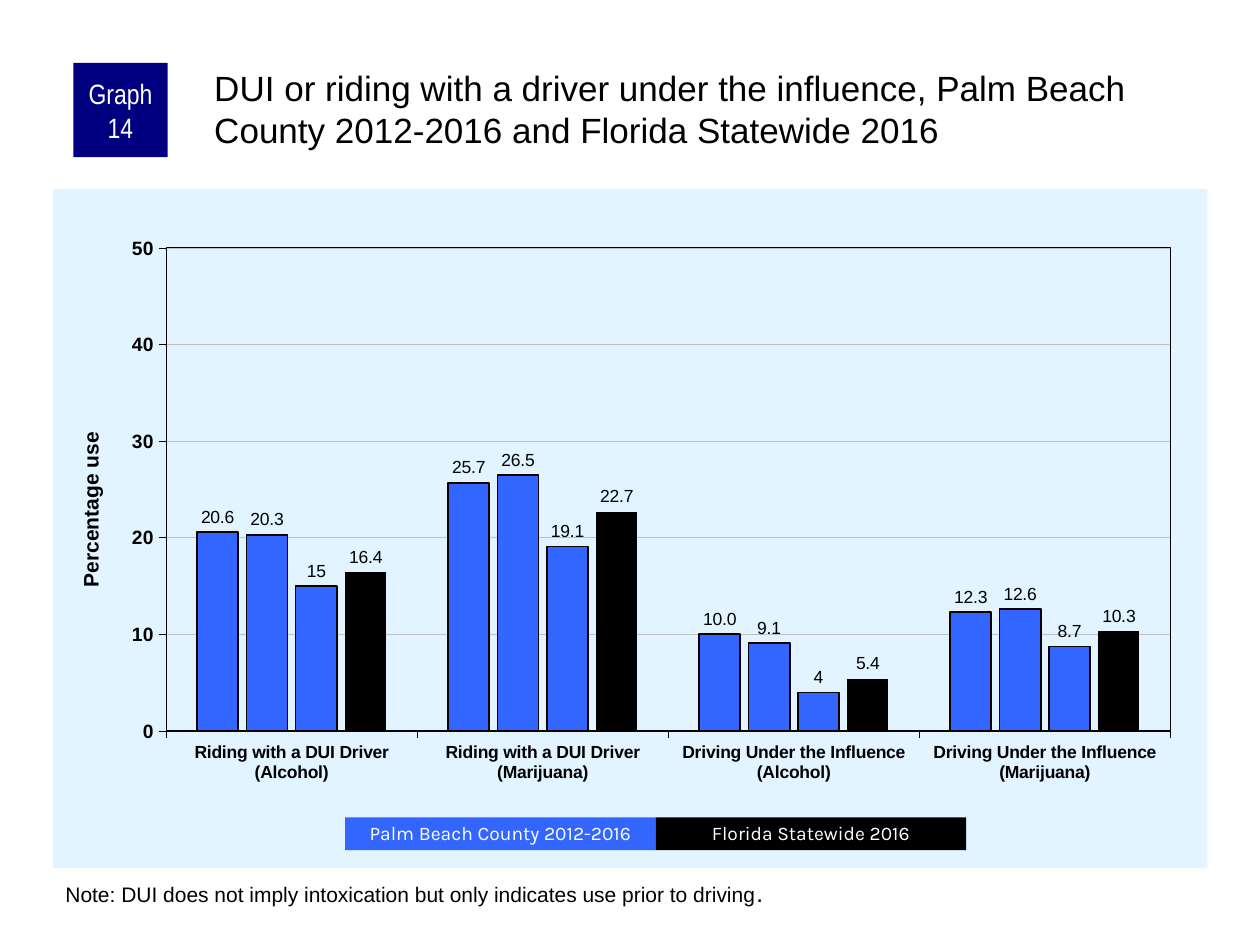
from pptx import Presentation
from pptx import util as u
from pptx.chart.data import CategoryChartData
from pptx.dml.color import RGBColor
from pptx.enum import chart as ch, shapes, text
from pptx.oxml import parse_xml

Cm, Pt = u.Cm, u.Pt
BLACK = RGBColor(0x00, 0x00, 0x00)
WHITE = RGBColor(0xFF, 0xFF, 0xFF)
NAVY = RGBColor(0x00, 0x00, 0x80)
BLUE = RGBColor(0x33, 0x66, 0xFF)
PALE = RGBColor(0xE1, 0xF4, 0xFF)
GREY = RGBColor(0xC0, 0xC0, 0xC0)
NS = ('xmlns:c="http://schemas.openxmlformats.org/drawingml/2006/chart" '
      'xmlns:a="http://schemas.openxmlformats.org/drawingml/2006/main"')


def style(font, size, name="Arial", color=BLACK, bold=False):
    font.size, font.name, font.bold = Pt(size), name, bold
    font.color.rgb = color


def block(box, fill, words, size, name):
    """Add a filled box with white centred text."""
    shape = slide.shapes.add_shape(shapes.MSO_SHAPE.RECTANGLE, *map(Cm, box))
    shape.shadow.inherit = False
    shape.fill.solid()
    shape.fill.fore_color.rgb = fill
    shape.line.fill.background()
    frame = shape.text_frame
    frame.word_wrap = True
    frame.vertical_anchor = text.MSO_ANCHOR.MIDDLE
    frame.margin_left = frame.margin_right = Cm(0.13)
    frame.margin_top = frame.margin_bottom = 0
    frame.text = words
    para = frame.paragraphs[0]
    para.alignment = text.PP_ALIGN.CENTER
    style(para.runs[0].font, size, name, WHITE)
    return para


prs = Presentation()
prs.slide_width, prs.slide_height = Cm(25.4), Cm(19.05)
slide = prs.slides.add_slide(prs.slide_layouts[6])

# Chart data
data = CategoryChartData()
data.categories = [f"{act} ({drug})"
                   for act in ("Riding with a DUI Driver", "Driving Under the Influence")
                   for drug in ("Alcohol", "Marijuana")]
rows = [  # values, colour, outline width, label format
    ((20.6, 25.7, 10, 12.3), BLUE, 1, "0.0"),
    ((20.3, 26.5, 9.1, 12.6), BLUE, 1, "0.0"),
    ((15, 19.1, 4, 8.7), BLUE, 0.75, "General"),
    ((16.4, 22.7, 5.4, 10.3), BLACK, None, "General"),
]
for num, row in enumerate(rows, 1):
    data.add_series(f"Series {num}", row[0])

# Chart
chart = slide.shapes.add_chart(
    ch.XL_CHART_TYPE.COLUMN_CLUSTERED,
    Cm(1.07), Cm(3.81), Cm(23.27), Cm(13.69), data).chart
chart.has_legend = chart.has_title = False
style(chart.font, 11.5)
plot = chart.plots[0]
plot.gap_width, plot.overlap, plot.vary_by_categories = 150, -20, False

# Columns and their labels
for bars, (vals, color, width, fmt) in zip(plot.series, rows):
    bars.format.fill.solid()
    bars.format.fill.fore_color.rgb = color
    if width:
        bars.format.line.color.rgb = BLACK
        bars.format.line.width = Pt(width)
    tags = bars.data_labels
    tags.show_value = True
    tags.position = ch.XL_LABEL_POSITION.OUTSIDE_END
    tags.number_format, tags.number_format_is_linked = fmt, False
    style(tags.font, 10)

# Axes
for axis, size in ((chart.category_axis, 10), (chart.value_axis, 11)):
    axis.major_tick_mark = ch.XL_TICK_MARK.OUTSIDE
    axis.minor_tick_mark = ch.XL_TICK_MARK.NONE
    axis.format.line.color.rgb = BLACK
    axis.format.line.width = Pt(0.25)
    style(axis.tick_labels.font, size, bold=True)
axis = chart.value_axis
axis.minimum_scale, axis.maximum_scale, axis.major_unit = 0, 50, 10
grid = axis.major_gridlines.format.line
grid.color.rgb, grid.width = GREY, Pt(0.25)
head = axis.axis_title.text_frame
head.text = "Percentage use"
style(head.paragraphs[0].runs[0].font, 12, bold=True)

# Plot position, plot frame and chart background
area = chart.element.xpath("c:chart/c:plotArea")[0]
for old in area.xpath("c:layout"):
    area.remove(old)
spots = "".join(f'<c:{key} val="{val}"/>' for key, val in (
    ("layoutTarget", "inner"), ("xMode", "edge"), ("yMode", "edge"),
    ("x", 0.098), ("y", 0.087), ("w", 0.87), ("h", 0.711)))
area.insert(0, parse_xml(
    f"<c:layout {NS}><c:manualLayout>{spots}</c:manualLayout></c:layout>"))
area.append(parse_xml(
    f'<c:spPr {NS}><a:noFill/><a:ln w="9525"><a:solidFill>'
    f'<a:srgbClr val="{BLACK}"/></a:solidFill></a:ln></c:spPr>'))
chart.element.xpath("c:txPr")[0].addprevious(parse_xml(
    f'<c:spPr {NS}><a:solidFill><a:srgbClr val="{PALE}"/></a:solidFill>'
    '<a:ln><a:noFill/></a:ln></c:spPr>'))

# Graph number
block((1.48, 1.27, 1.9, 1.9), NAVY, "Graph 14", 16, "Arial Narrow")

# Title
frame = slide.shapes.add_textbox(Cm(4.24), Cm(1.27), Cm(20.12), Cm(2.11)).text_frame
frame.word_wrap = True
frame.margin_left = frame.margin_top = Cm(0.08)
frame.margin_right = frame.margin_bottom = 0
frame.text = ("DUI or riding with a driver under the influence, "
              "Palm Beach County 2012-2016 and Florida Statewide 2016")
style(frame.paragraphs[0].runs[0].font, 20)

# Note
frame = slide.shapes.add_textbox(Cm(1.07), Cm(17.58), Cm(23.29), Cm(0.86)).text_frame
frame.word_wrap = True
para = frame.paragraphs[0]
for words, size in (
        ("Note: DUI does not imply intoxication but only indicates use prior to driving", 12),
        (".", 14)):
    run = para.add_run()
    run.text = words
    style(run.font, size)

# Legend
keys = (("Palm Beach County 2012-2016", BLUE), ("Florida Statewide 2016", BLACK))
for num, (words, color) in enumerate(keys):
    para = block((6.96 + 6.26 * num, 16.48, 6.26, 0.66), color, words, 11, "Karla")
    para.line_spacing = 0.9

prs.save("out.pptx")
